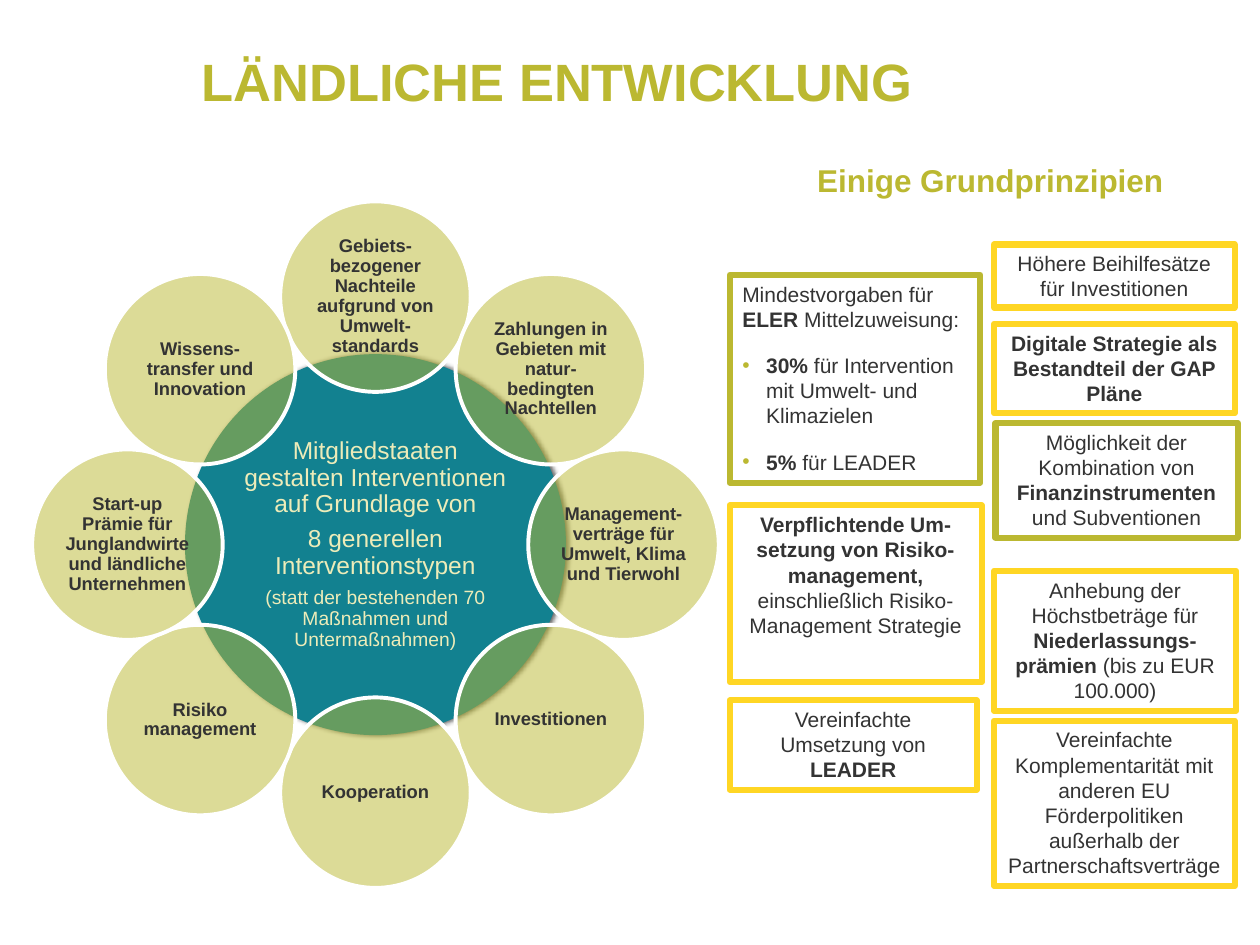
from dataclasses import dataclass
from math import cos, radians, sin

from lxml.etree import SubElement
from pptx import Presentation
from pptx.dml.color import RGBColor
from pptx.enum.shapes import MSO_SHAPE
from pptx.enum.text import MSO_ANCHOR, MSO_AUTO_SIZE, PP_ALIGN
from pptx.oxml.ns import qn
from pptx.util import Cm, Pt

OLIVE, YELLOW, TEAL = "BBB831", "FFD624", "128190"
CREAM, DARK, WHITE = "EDECB9", "333333", "FFFFFF"
HUB_X, HUB_Y, HUB_SIZE = 7.57, 10.98, 7.68
RING, PETAL = 5.0, 3.84


@dataclass
class Para:
    text: str  # parts between asterisks are bold
    size: float = 12
    color: str = DARK
    align: PP_ALIGN = PP_ALIGN.CENTER
    after: float = 0
    line: float = 1.0
    bullet: bool = False


@dataclass
class Box:
    left: float
    top: float
    width: float
    height: float
    color: str
    text: str


PETALS = [  # clockwise from the top
    "Gebiets-bezogener Nachteile aufgrund von Umwelt-standards",
    "Zahlungen in Gebieten mit natur-bedingten NachteIlen",
    "Management-verträge für Umwelt, Klima und Tierwohl",
    "Investitionen",
    "Kooperation",
    "Risiko management",
    "Start-up Prämie für Junglandwirte und ländliche Unternehmen",
    "Wissens-transfer und Innovation",
]
HUB = [
    ("Mitgliedstaaten gestalten Interventionen auf Grundlage von", 14),
    ("8 generellen Interventionstypen", 14),
    ("(statt der bestehenden 70 Maßnahmen und Untermaßnahmen)", 11),
]
BOXES = [
    Box(14.71, 10.19, 5.08, 3.56, YELLOW,
        "*Verpflichtende Um-setzung von Risiko- management,*\v"
        "einschließlich Risiko- Management Strategie"),
    Box(14.71, 14.12, 4.98, 1.8, YELLOW,
        "Vereinfachte Umsetzung von *LEADER*"),
    Box(20.04, 4.93, 4.85, 1.27, YELLOW,
        "Höhere Beihilfesätze für Investitionen"),
    Box(20.04, 6.53, 4.85, 1.8, YELLOW,
        "*Digitale Strategie als Bestandteil der GAP Pläne*"),
    Box(20.07, 8.53, 4.88, 2.31, OLIVE,
        "Möglichkeit der Kombination von *Finanzinstrumenten* "
        "und Subventionen"),
    Box(20.04, 11.51, 4.88, 2.82, YELLOW,
        "Anhebung der Höchstbeträge für *Niederlassungs-prämien* "
        "(bis zu EUR 100.000)"),
    Box(20.04, 14.53, 4.85, 3.33, YELLOW,
        "Vereinfachte Komplementarität mit anderen EU Förderpolitiken "
        "außerhalb der Partnerschaftsverträge"),
]
RULES = [
    Para("Mindestvorgaben für *ELER *Mittelzuweisung:",
         align=PP_ALIGN.LEFT, after=12),
    Para("*30%* für Intervention mit Umwelt- und Klimazielen",
         align=PP_ALIGN.LEFT, after=12, bullet=True),
    Para("*5%* für LEADER", align=PP_ALIGN.LEFT, after=12, bullet=True),
]


def rgb(color: str) -> RGBColor:
    return RGBColor.from_string(color)


def assign(target, values: dict) -> None:
    for name, value in values.items():
        setattr(target, name, value)


def place(shape, left: float, top: float, width: float, height: float) -> None:
    assign(shape, {"left": Cm(left), "top": Cm(top),
                   "width": Cm(width), "height": Cm(height)})


def mark(par, bullet: bool) -> None:
    """Set the indent and bullet of a paragraph, or clear inherited ones."""
    props = par._p.get_or_add_pPr()
    hang = Cm(0.48) if bullet else 0
    props.set("marL", str(hang))
    props.set("indent", str(-hang))
    if bullet:
        tint = SubElement(props, qn("a:buClr"))
        SubElement(tint, qn("a:srgbClr"), val=OLIVE)
        SubElement(props, qn("a:buFont"), typeface="Arial")
        SubElement(props, qn("a:buChar"), char="•")
    else:
        SubElement(props, qn("a:buNone"))


def write(shape, paras: list[Para], anchor=MSO_ANCHOR.TOP) -> None:
    frame = shape.text_frame
    assign(frame, {"word_wrap": True, "auto_size": MSO_AUTO_SIZE.NONE,
                   "vertical_anchor": anchor})
    for i, item in enumerate(paras):
        par = frame.add_paragraph() if i else frame.paragraphs[0]
        for n, part in enumerate(item.text.split("*")):
            for k, piece in enumerate(part.split("\v")):
                if k:
                    par.add_line_break()
                if piece:
                    run = par.add_run()
                    run.text = piece
                    assign(run.font, {"name": "Arial", "size": Pt(item.size),
                                      "bold": n % 2 == 1})
                    run.font.color.rgb = rgb(item.color)
        mark(par, item.bullet)
        assign(par, {"alignment": item.align, "space_before": Pt(0),
                     "space_after": Pt(item.after),
                     "line_spacing": item.line})


def frame_box(shape, color: str) -> None:
    shape.fill.background()
    shape.line.color.rgb = rgb(color)
    shape.line.width = Pt(3.5)


def draw_disc(shapes, x: float, y: float, size: float, color: str,
              paras: list[Para]):
    """Add a circle centred on x, y with its text in the middle."""
    disc = shapes.add_shape(MSO_SHAPE.OVAL, Cm(x - size / 2),
                            Cm(y - size / 2), Cm(size), Cm(size))
    disc.shadow.inherit = False
    disc.fill.solid()
    disc.fill.fore_color.rgb = rgb(color)
    disc.line.fill.background()
    sides = ("left", "top", "right", "bottom")
    assign(disc.text_frame, {f"margin_{s}": Cm(0.05) for s in sides})
    write(disc, paras, MSO_ANCHOR.MIDDLE)
    return disc


def draw_hub(shapes) -> None:
    paras = [Para(text, size, CREAM, after=round(0.35 * size, 1), line=0.9)
             for text, size in HUB]
    disc = draw_disc(shapes, HUB_X, HUB_Y, HUB_SIZE, TEAL, paras)
    effects = disc._element.spPr.find(qn("a:effectLst"))
    shade = SubElement(effects, qn("a:outerShdw"), blurRad=str(Pt(3)),
                       dist=str(Pt(1.5)), dir="0", rotWithShape="0")
    tint = SubElement(shade, qn("a:srgbClr"), val="000000")
    SubElement(tint, qn("a:alpha"), val="60000")


def draw_petal(shapes, index: int, text: str) -> None:
    turn = radians(index * 360 / len(PETALS))
    para = Para(f"*{text}*", 10.5, after=3.7, line=0.9)
    disc = draw_disc(shapes, HUB_X + RING * sin(turn),
                     HUB_Y - RING * cos(turn), PETAL, OLIVE, [para])
    tint = disc._element.spPr.find(qn("a:solidFill"))[0]
    SubElement(tint, qn("a:alpha"), val="50000")
    disc.line.color.rgb = rgb(WHITE)
    disc.line.width = Pt(2.25)


def draw_box(shapes, box: Box) -> None:
    shape = shapes.add_shape(MSO_SHAPE.RECTANGLE, Cm(box.left), Cm(box.top),
                             Cm(box.width), Cm(box.height))
    shape.shadow.inherit = False
    frame_box(shape, box.color)
    write(shape, [Para(box.text)])


def main() -> None:
    deck = Presentation()
    assign(deck, {"slide_width": Cm(25.4), "slide_height": Cm(19.05)})
    slide = deck.slides.add_slide(deck.slide_layouts[1])
    shapes = slide.shapes

    title, body = slide.placeholders
    place(title, 3.81, 0.86, 22.63, 2.01)
    write(title, [Para("*LÄNDLICHE ENTWICKLUNG*", 30, OLIVE, PP_ALIGN.LEFT)])
    place(body, 14.71, 5.54, 5.05, 4.19)
    frame_box(body, OLIVE)
    write(body, RULES)

    draw_hub(shapes)
    for index, text in enumerate(PETALS):
        draw_petal(shapes, index, text)

    head = shapes.add_textbox(Cm(15.09), Cm(3.12), Cm(9.75), Cm(1.19))
    write(head, [Para("*Einige Grundprinzipien*", 18, OLIVE)])
    for box in BOXES:
        draw_box(shapes, box)
    deck.save("out.pptx")


if __name__ == "__main__":
    main()
